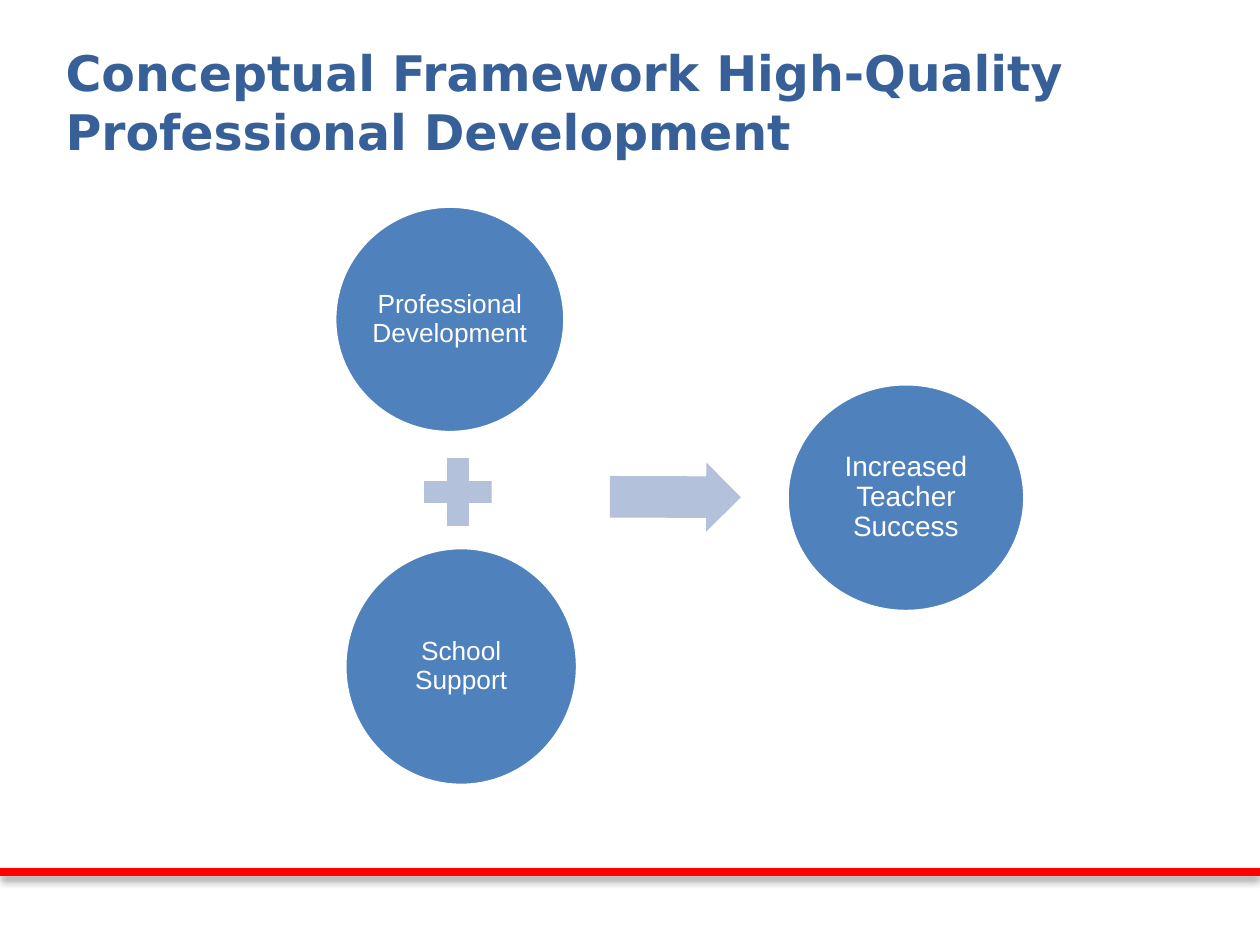
from typing import NamedTuple

from lxml import etree
from pptx import Presentation
from pptx.dml.color import RGBColor
from pptx.enum import shapes, text
from pptx.oxml.ns import qn
from pptx.util import Inches, Pt

WHITE = RGBColor(0xFF, 0xFF, 0xFF)
RED = RGBColor(0xFF, 0x00, 0x00)
TITLE_BLUE = RGBColor(0x37, 0x60, 0x98)
CIRCLE_BLUE = RGBColor(0x4F, 0x81, 0xBD)
OPERATOR_BLUE = RGBColor(0xB3, 0xC1, 0xDB)


class Box(NamedTuple):
    left: float
    top: float
    width: float
    height: float


class Circle(NamedTuple):
    label: str
    box: Box
    font_size: int


class Operator(NamedTuple):
    kind: shapes.MSO_SHAPE
    box: Box
    rotation: float = 0
    adjustments: tuple = ()


CIRCLES = [
    Circle("Professional Development", Box(2.64, 1.62, 1.86, 1.83), 15),
    Circle("School Support", Box(2.72, 4.33, 1.88, 1.92), 15),
    Circle("Increased Teacher Success", Box(6.23, 3.03, 1.92, 1.84), 16),
]
OPERATORS = [
    Operator(shapes.MSO_SHAPE.MATH_PLUS, Box(3.27, 3.54, 0.73, 0.73)),
    Operator(shapes.MSO_SHAPE.RIGHT_ARROW, Box(4.84, 3.67, 1.04, 0.55), 0.2, (0.6, 0.5)),
]


def add_filled_shape(slide, kind: shapes.MSO_SHAPE, box: Box, color: RGBColor):
    shape = slide.shapes.add_shape(kind, *map(Inches, box))
    shape.shadow.inherit = False
    shape.fill.solid()
    shape.fill.fore_color.rgb = color
    shape.line.fill.background()
    return shape


def add_circle(slide, circle: Circle) -> None:
    shape = add_filled_shape(slide, shapes.MSO_SHAPE.OVAL, circle.box, CIRCLE_BLUE)
    shape.line.color.rgb = WHITE
    shape.line.width = Pt(4.33)
    frame = shape.text_frame
    frame.word_wrap = True
    frame.vertical_anchor = text.MSO_ANCHOR.MIDDLE
    frame.margin_left = frame.margin_right = Inches(0.02)
    frame.margin_top = frame.margin_bottom = Inches(0.02)
    paragraph = frame.paragraphs[0]
    paragraph.text = circle.label
    paragraph.alignment = text.PP_ALIGN.CENTER
    paragraph.line_spacing = 0.9
    paragraph.font.name = "Arial"
    paragraph.font.size = Pt(circle.font_size)
    paragraph.font.color.rgb = WHITE


def add_operator(slide, operator: Operator) -> None:
    shape = add_filled_shape(slide, operator.kind, operator.box, OPERATOR_BLUE)
    shape.rotation = operator.rotation
    for index, value in enumerate(operator.adjustments):
        shape.adjustments[index] = value


def add_footer_rule(slide) -> None:
    rule = slide.shapes.add_connector(
        shapes.MSO_CONNECTOR.STRAIGHT, 0, Inches(6.92), Inches(10), Inches(6.92))
    rule.line.color.rgb = RED
    rule.line.width = Pt(5)
    # Soft shadow straight below the rule
    effects = etree.SubElement(rule._element.spPr, qn("a:effectLst"))
    shadow = etree.SubElement(
        effects, qn("a:outerShdw"), blurRad=str(Pt(4)), dist=str(Pt(3)),
        dir="5400000", rotWithShape="0")
    color = etree.SubElement(shadow, qn("a:srgbClr"), val="000000")
    etree.SubElement(color, qn("a:alpha"), val="35000")


def set_title(slide) -> None:
    title = slide.shapes.title
    title.left, title.top, title.width, title.height = map(Inches, (0.42, 0.18, 9, 1.25))
    frame = title.text_frame
    frame.word_wrap = True
    frame.vertical_anchor = text.MSO_ANCHOR.MIDDLE
    paragraph = frame.paragraphs[0]
    paragraph.text = "Conceptual Framework High-Quality Professional Development"
    paragraph.alignment = text.PP_ALIGN.LEFT
    paragraph.font.name = "DejaVu Sans"
    paragraph.font.size = Pt(28)
    paragraph.font.bold = True
    paragraph.font.color.rgb = TITLE_BLUE


def main() -> None:
    presentation = Presentation()
    presentation.slide_width = Inches(10)
    presentation.slide_height = Inches(7.5)
    slide = presentation.slides.add_slide(presentation.slide_layouts[5])

    add_footer_rule(slide)
    set_title(slide)

    # Two inputs joined by a plus, leading to the outcome
    for circle in CIRCLES:
        add_circle(slide, circle)
    for operator in OPERATORS:
        add_operator(slide, operator)

    presentation.save("out.pptx")


if __name__ == "__main__":
    main()
